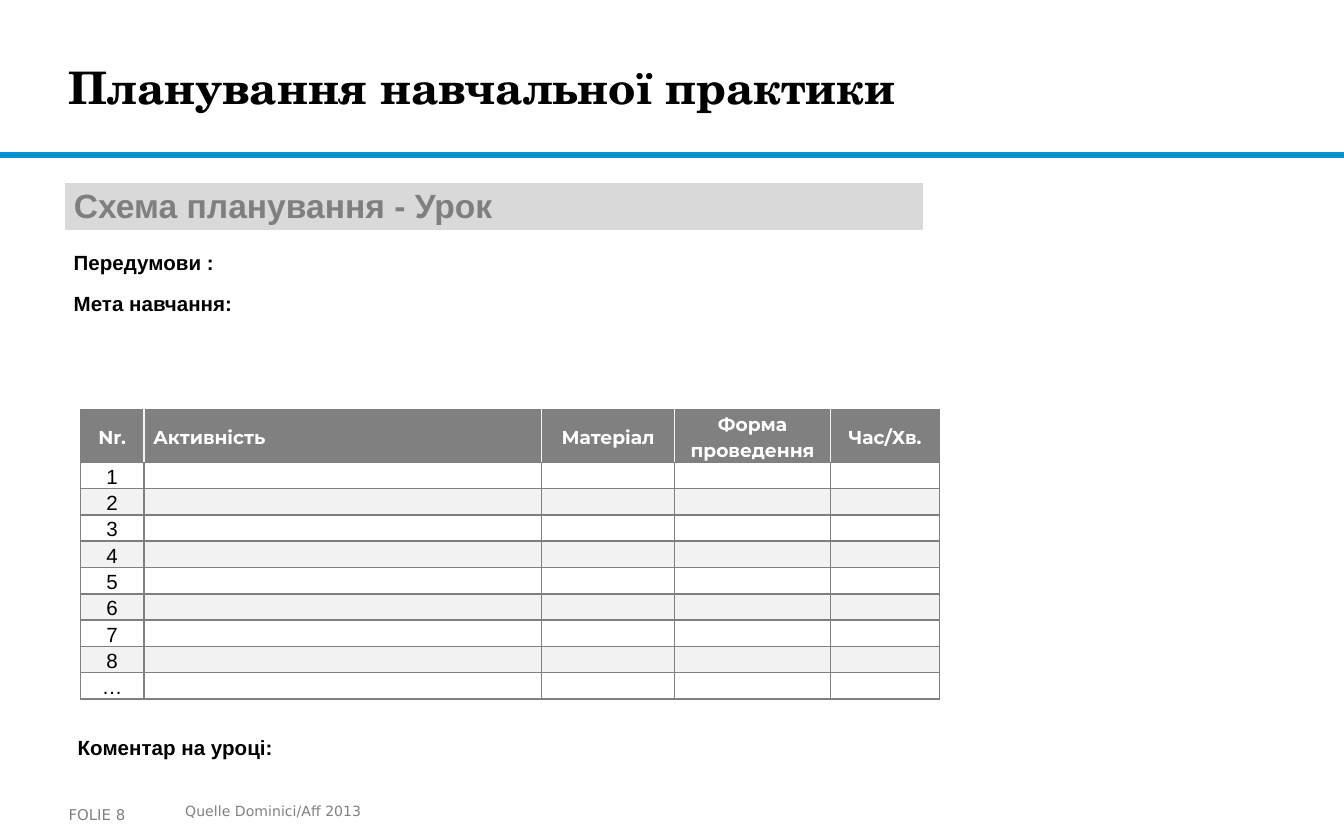
from lxml import etree
from pptx import Presentation
from pptx.dml.color import RGBColor
from pptx.enum.shapes import MSO_SHAPE
from pptx.enum.text import MSO_ANCHOR, PP_ALIGN
from pptx.oxml.ns import qn
from pptx.util import Inches, Pt

RECTANGLE = MSO_SHAPE.RECTANGLE
TOP, MIDDLE = MSO_ANCHOR.TOP, MSO_ANCHOR.MIDDLE
LEFT, CENTER, JUSTIFY = PP_ALIGN.LEFT, PP_ALIGN.CENTER, PP_ALIGN.JUSTIFY
BLACK, WHITE, GREY, RULE = "000000", "FFFFFF", "808080", "7F7F7F"
PALE, BAND = "F2F2F2", "D9D9D9"
SANS, SERIF, HEADING, SMALL = "Arial", "TeX Gyre Schola", "Montserrat", "DejaVu Sans"
HEADERS = ["Nr.", "Активність", "Матеріал", "Форма проведення", "Час/Хв."]
NUMBERS = [str(number) for number in range(1, 9)] + ["…"]
COLUMNS = [0.47, 2.96, 0.99, 1.16, 0.81]


def colour(value):
    return RGBColor.from_string(value)


def format_paragraph(para, size, name, ink, bold=False, align=LEFT):
    para.alignment = align
    font = para.font
    font.size, font.name, font.bold = Pt(size), name, bold
    font.color.rgb = colour(ink)


def add_text(page, box, lines, style, anchor=TOP, margin=0.1, gap=0):
    frame = page.shapes.add_textbox(*map(Inches, box)).text_frame
    frame.word_wrap = True
    frame.vertical_anchor = anchor
    frame.margin_left = frame.margin_right = Inches(margin)
    for index, line in enumerate(lines):
        para = frame.add_paragraph() if index else frame.paragraphs[0]
        para.text = line
        format_paragraph(para, *style)
        if index:
            para.space_before = Pt(gap)


def set_border(cell, side, value):
    properties = cell._tc.get_or_add_tcPr()
    line = etree.SubElement(properties, qn(f"a:ln{side}"), w=str(Pt(1)))
    if value is None:
        etree.SubElement(line, qn("a:noFill"))
    else:
        fill = etree.SubElement(line, qn("a:solidFill"))
        etree.SubElement(fill, qn("a:srgbClr"), val=value)


def fill_cell(cell, text, style, fill, borders, anchor=TOP):
    for side, value in zip("LRTB", borders):
        set_border(cell, side, value)
    cell.fill.solid()
    cell.fill.fore_color.rgb = colour(fill)
    cell.vertical_anchor = anchor
    cell.margin_left = cell.margin_right = Inches(0.07)
    cell.margin_top = cell.margin_bottom = 0
    para = cell.text_frame.paragraphs[0]
    if text:
        para.text = text
        para.line_spacing = 1.15
        format_paragraph(para, *style)
    else:
        etree.SubElement(para._p, qn("a:endParaRPr"), sz="800")


def add_plain_table(page, left, top, widths, heights):
    frame = page.shapes.add_table(len(heights), len(widths), Inches(left), Inches(top),
                                  Inches(sum(widths)), Inches(sum(heights)))
    table = frame.table
    table.first_row = table.horz_banding = False
    for column, width in zip(table.columns, widths):
        column.width = Inches(width)
    for row, height in zip(table.rows, heights):
        row.height = Inches(height)
    return table


def add_header(page, box):
    title = page.shapes.title
    title.left, title.top, title.width, title.height = map(Inches, box)
    frame = title.text_frame
    frame.text = "Планування навчальної практики"
    frame.vertical_anchor = MIDDLE
    frame.margin_left = frame.margin_right = frame.margin_top = frame.margin_bottom = 0
    format_paragraph(frame.paragraphs[0], 24, SERIF, BLACK, True)
    bottom = box[1] + box[3]
    rule = page.shapes.add_shape(RECTANGLE, 0, Inches(bottom), Inches(10), Inches(0.03))
    rule.shadow.inherit = False
    rule.fill.solid()
    rule.fill.fore_color.rgb = colour("0C94B7")
    rule.line.color.rgb = colour("0096D3")
    rule.line.width = Pt(1)


def add_subtitle(page, left, top):
    table = add_plain_table(page, left, top, [5.29, 1.1], [0.35])
    style = (18, SANS, RULE, True, JUSTIFY)
    for index, text in enumerate(["Схема планування - Урок", ""]):
        fill_cell(table.cell(0, index), text, style, BAND, [None] * 4)


def add_plan(page, left, top):
    table = add_plain_table(page, left, top, COLUMNS, [0.39] + [0.195] * len(NUMBERS))
    last = len(HEADERS) - 1
    for index, text in enumerate(HEADERS):
        style = (10, HEADING, WHITE, True, LEFT if index == 1 else CENTER)
        borders = [PALE if index else RULE, PALE if index < last else RULE, RULE, RULE]
        fill_cell(table.cell(0, index), text, style, GREY, borders, MIDDLE)
    style = (11, SANS, BLACK, False, CENTER)
    for row, number in enumerate(NUMBERS, 1):
        shade = WHITE if row % 2 else PALE
        for index in range(len(HEADERS)):
            text = "" if index else number
            fill_cell(table.cell(row, index), text, style, shade, [RULE] * 4)


def add_notes(page):
    label = (11, SANS, BLACK, True)
    add_text(page, (0.45, 1.81, 2.08, 0.59), ["Передумови :", "Мета навчання:"], label, gap=9)
    add_text(page, (0.48, 5.42, 1.8, 0.29), ["Коментар на уроці:"], label)


def add_footer(page, top):
    add_text(page, (0.51, top, 0.98, 0.28), ["FOLIE 8"], (8, SMALL, GREY), MIDDLE, 0)
    add_text(page, (1.28, top, 5.14, 0.23), ["Quelle Dominici/Aff 2013"], (7.5, SMALL, GREY))


def main():
    deck = Presentation()
    deck.slide_width, deck.slide_height = Inches(10), Inches(6.25)
    page = deck.slides.add_slide(deck.slide_layouts[5])
    add_header(page, (0.51, 0.15, 7.48, 0.99))
    add_subtitle(page, 0.48, 1.36)
    add_plan(page, 0.6, 3.05)
    add_notes(page)
    add_footer(page, 5.92)
    deck.save("out.pptx")


if __name__ == "__main__":
    main()
